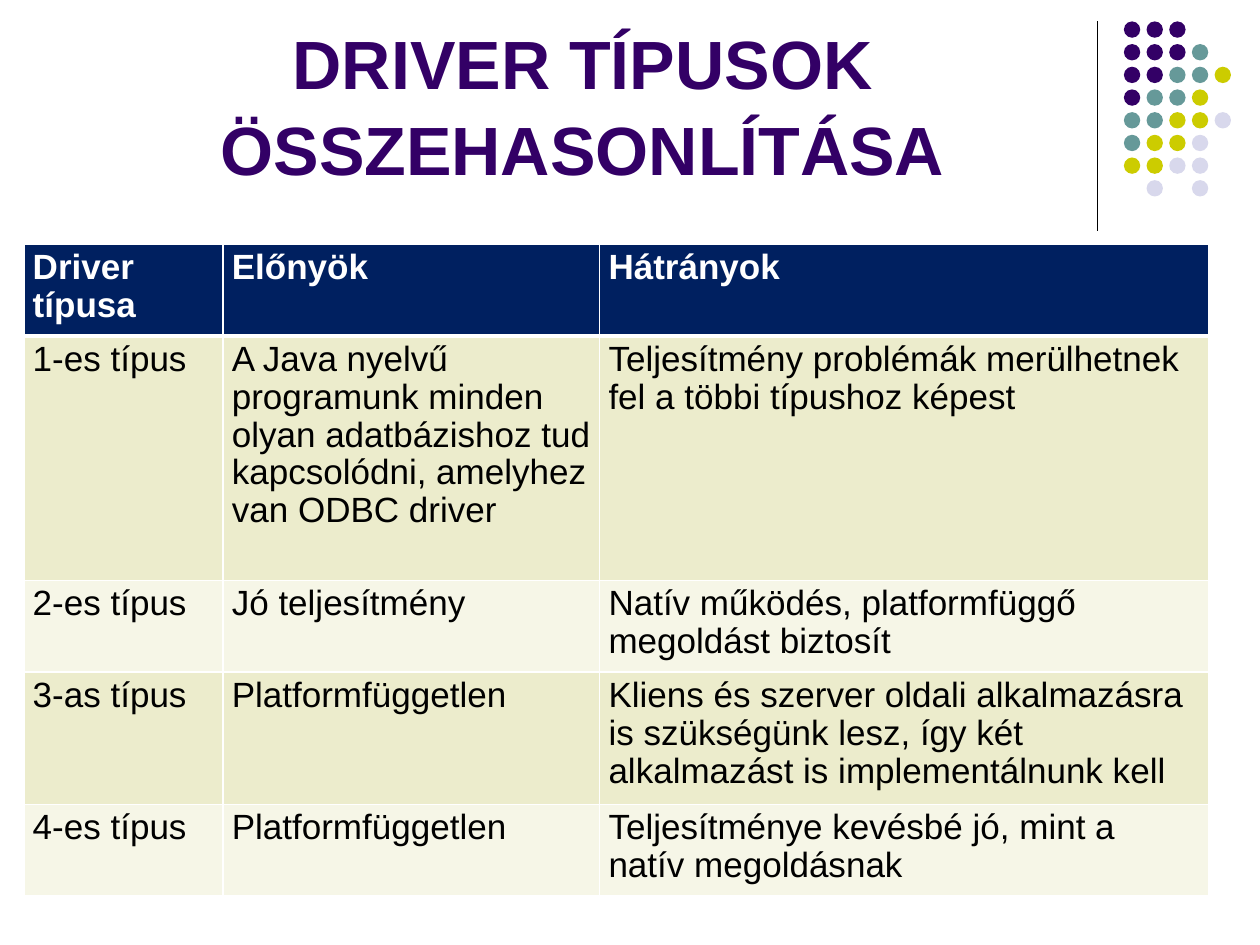
"""Build a slide that compares driver types in a table."""
import pptx
import pptx.dml.color
import pptx.enum.shapes
import pptx.enum.text
import pptx.oxml
import pptx.oxml.ns
import pptx.util

Inches = pptx.util.Inches
Pt = pptx.util.Pt
RGBColor = pptx.dml.color.RGBColor

PURPLE = RGBColor(0x33, 0x00, 0x66)
TEAL = RGBColor(0x66, 0x99, 0x99)
LIME = RGBColor(0xCC, 0xCC, 0x00)
LILAC = RGBColor(0xD8, 0xD8, 0xEC)
NAVY = RGBColor(0x00, 0x20, 0x60)
SAND = RGBColor(0xEC, 0xEC, 0xCC)
CREAM = RGBColor(0xF6, 0xF6, 0xE7)
WHITE = RGBColor(0xFF, 0xFF, 0xFF)
BLACK = RGBColor(0x00, 0x00, 0x00)

DOTS = ["PPP", "PPPT", "PPTTL", "PTTL", "TTLLG", "TLLG", "LLGG", " G G"]
HUES = {"P": PURPLE, "T": TEAL, "L": LIME, "G": LILAC}
COLS = [1.58, 2.99, 4.83]
ROWS = [
    (0.69, ["Driver típusa", "Előnyök", "Hátrányok"]),
    (1.94, ["1-es típus",
            "A Java nyelvű programunk minden olyan adatbázishoz tud "
            "kapcsolódni, amelyhez van ODBC driver",
            "Teljesítmény problémák merülhetnek fel a többi típushoz képest"]),
    (0.7, ["2-es típus", "Jó teljesítmény",
           "Natív működés, platformfüggő megoldást biztosít"]),
    (1.01, ["3-as típus", "Platformfüggetlen",
            "Kliens és szerver oldali alkalmazásra is szükségünk lesz, "
            "így két alkalmazást is implementálnunk kell"]),
    (0.7, ["4-es típus", "Platformfüggetlen",
           "Teljesítménye kevésbé jó, mint a natív megoldásnak"]),
]


class Deck:
    """Hold the style and the current slide."""

    def __init__(self, font="Arial"):
        self.font = font
        self.deck = pptx.Presentation()
        self.deck.slide_width = Inches(10)
        self.deck.slide_height = Inches(7.5)
        self.slide = self.deck.slides.add_slide(self.deck.slide_layouts[6])

    def text(self, frame, words, size, color, bold, pitch):
        frame.word_wrap = True
        para = frame.paragraphs[0]
        para.line_spacing = pitch
        run = para.add_run()
        run.text = words
        run.font.name = self.font
        run.font.size = Pt(size)
        run.font.bold = bold
        run.font.color.rgb = color
        return para

    def title(self, words, left, top, width, height):
        box = self.slide.shapes.add_textbox(
            Inches(left), Inches(top), Inches(width), Inches(height))
        frame = box.text_frame
        frame.vertical_anchor = pptx.enum.text.MSO_ANCHOR.BOTTOM
        para = self.text(frame, words, 39, PURPLE, True, 1.05)
        para.alignment = pptx.enum.text.PP_ALIGN.CENTER

    def rule(self, left, top, end):
        line = self.slide.shapes.add_connector(
            pptx.enum.shapes.MSO_CONNECTOR.STRAIGHT,
            Inches(left), Inches(top), Inches(left), Inches(end))
        line.line.color.rgb = BLACK
        line.line.width = Pt(0.75)
        props = line._element.spPr
        props.append(props.makeelement(pptx.oxml.ns.qn("a:effectLst"), {}))

    def dots(self, left, top, step, size):
        group = self.slide.shapes.add_group_shape()
        for row, line in enumerate(DOTS):
            for col, key in enumerate(line):
                if key in HUES:
                    dot = group.shapes.add_shape(
                        pptx.enum.shapes.MSO_SHAPE.OVAL,
                        Inches(left + col * step), Inches(top + row * step),
                        Inches(size), Inches(size))
                    dot.shadow.inherit = False
                    dot.fill.solid()
                    dot.fill.fore_color.rgb = HUES[key]
                    dot.line.fill.background()

    def border(self, cell, side, width):
        edge = pptx.oxml.parse_xml(
            f'<a:{side} {pptx.oxml.ns.nsdecls("a")} w="{Pt(width)}">'
            f'<a:solidFill><a:srgbClr val="{WHITE}"/></a:solidFill></a:{side}>')
        cell._tc.get_or_add_tcPr().append(edge)

    def cell(self, cell, words, row):
        head = row == 0
        cell.margin_left = cell.margin_right = Inches(0.07)
        cell.margin_top = cell.margin_bottom = Inches(0.04)
        widths = {"lnL": 1, "lnR": 1, "lnT": 3 if row == 1 else 1,
                  "lnB": 3 if head else 1}
        for side, width in widths.items():
            self.border(cell, side, width)
        cell.fill.solid()
        cell.fill.fore_color.rgb = NAVY if head else SAND if row % 2 else CREAM
        self.text(cell.text_frame, words, 20, WHITE if head else BLACK,
                  head, 0.97)

    def table(self, left, top):
        table = self.slide.shapes.add_table(
            len(ROWS), len(COLS), Inches(left), Inches(top),
            Inches(sum(COLS)), Inches(sum(tall for tall, _ in ROWS))).table
        for col, width in enumerate(COLS):
            table.columns[col].width = Inches(width)
        for row, (tall, cells) in enumerate(ROWS):
            table.rows[row].height = Inches(tall)
            for col, words in enumerate(cells):
                self.cell(table.cell(row, col), words, row)


def main():
    deck = Deck()
    deck.rule(8.71, 0.17, 1.83)
    deck.dots(8.92, 0.17, 0.18, 0.13)
    deck.title("DRIVER TÍPUSOK ÖSSZEHASONLÍTÁSA", 0.5, 0.13, 8.25, 1.42)
    deck.table(0.19, 1.94)
    deck.deck.save("out.pptx")


if __name__ == "__main__":
    main()
